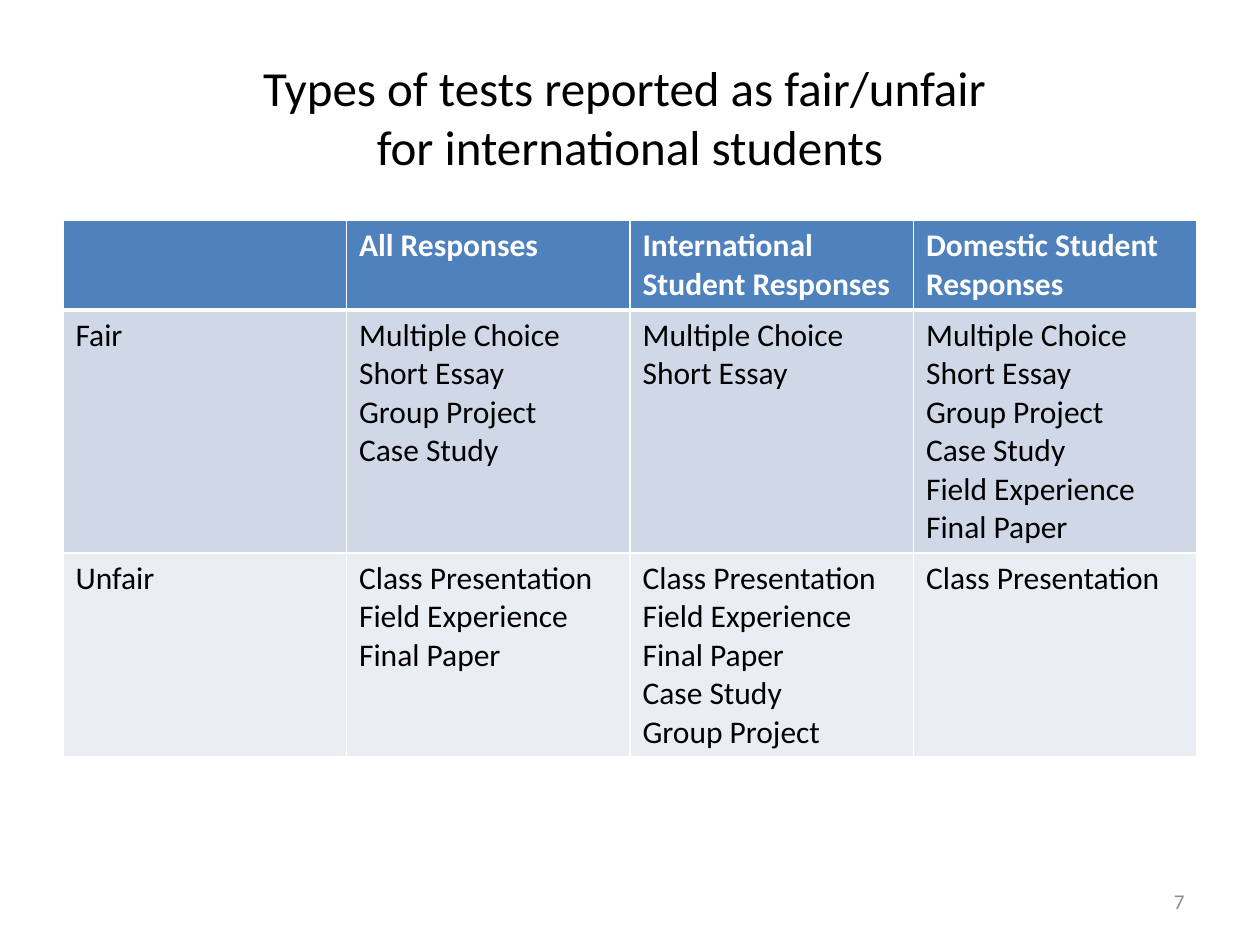
from pptx import Presentation
from pptx.dml.color import RGBColor
from pptx.enum.text import MSO_ANCHOR, PP_ALIGN
from pptx.oxml import parse_xml
from pptx.oxml.ns import nsdecls
from pptx.util import Inches, Pt

COLORS = {
    "text": "000000",
    "white": "FFFFFF",
    "header": "4F81BD",
    "fair": "D0D8E8",
    "unfair": "E9EDF4",
    "number": "8C8C8C",
}
HEADINGS = [
    [],
    ["All Responses"],
    ["International Student Responses"],
    ["Domestic Student Responses"],
]
FAIR = [
    ["Fair"],
    ["Multiple Choice", "Short Essay", "Group Project", "Case Study"],
    ["Multiple Choice", "Short Essay"],
    ["Multiple Choice", "Short Essay", "Group Project", "Case Study",
     "Field Experience", "Final Paper"],
]
UNFAIR = [
    ["Unfair"],
    ["Class Presentation", "Field Experience", "Final Paper"],
    ["Class Presentation", "Field Experience", "Final Paper", "Case Study",
     "Group Project"],
    ["Class Presentation"],
]


class SlideBuilder:
    """Holds the style and the current slide, and adds elements to it."""

    def __init__(self, page, font="Calibri"):
        self.page = page
        self.font = font

    def span(self, para, text, size, color, bold=False):
        span = para.add_run()
        span.text = text
        span.font.name = self.font
        span.font.size = Pt(size)
        span.font.bold = bold
        span.font.color.rgb = RGBColor.from_string(COLORS[color])

    def text(self, area, lines, size, color, align):
        box = self.page.shapes.add_textbox(*map(Inches, area))
        frame = box.text_frame
        frame.word_wrap = True
        frame.vertical_anchor = MSO_ANCHOR.MIDDLE
        para = frame.paragraphs[0]
        para.alignment = align
        for index, line in enumerate(lines):
            if index:
                para.add_line_break()
            self.span(para, line, size, color)

    def border(self, cell, side, width):
        cell._tc.get_or_add_tcPr().append(parse_xml(
            f'<a:{side} {nsdecls("a")} w="{Pt(width)}"><a:solidFill>'
            f'<a:srgbClr val="{COLORS["white"]}"/></a:solidFill></a:{side}>'))

    def cell(self, cell, lines, fill, color, bold, top, bottom):
        widths = {"lnL": 1, "lnR": 1, "lnT": top, "lnB": bottom}
        for side, width in widths.items():
            self.border(cell, side, width)
        cell.fill.solid()
        cell.fill.fore_color.rgb = RGBColor.from_string(COLORS[fill])
        frame = cell.text_frame
        for index, line in enumerate(lines):
            para = frame.add_paragraph() if index else frame.paragraphs[0]
            self.span(para, line, 18, color, bold)

    def table(self, area, rows, heights):
        frame = self.page.shapes.add_table(
            len(rows), len(rows[0][1]), *map(Inches, area))
        table = frame.table
        table.horz_banding = False
        for row, ((fill, texts), height) in enumerate(zip(rows, heights)):
            table.rows[row].height = Inches(height)
            heading = row == 0
            for column, lines in enumerate(texts):
                self.cell(table.cell(row, column), lines, fill,
                          "white" if heading else "text", heading,
                          top=3 if row == 1 else 1,
                          bottom=3 if heading else 1)


def main():
    deck = Presentation()
    deck.slide_width, deck.slide_height = Inches(10), Inches(7.5)
    builder = SlideBuilder(deck.slides.add_slide(deck.slide_layouts[6]))
    builder.text((0.5, 0.3, 9, 1.25),
                 ["Types of tests reported as fair/unfair ",
                  "for international students"],
                 28, "text", PP_ALIGN.CENTER)
    builder.table((0.5, 1.75, 9, 4.26),
                  [("header", HEADINGS), ("fair", FAIR), ("unfair", UNFAIR)],
                  [0.71, 1.93, 1.62])
    builder.text((7.17, 6.95, 2.33, 0.4), ["7"], 12, "number", PP_ALIGN.RIGHT)
    deck.save("out.pptx")


if __name__ == "__main__":
    main()
